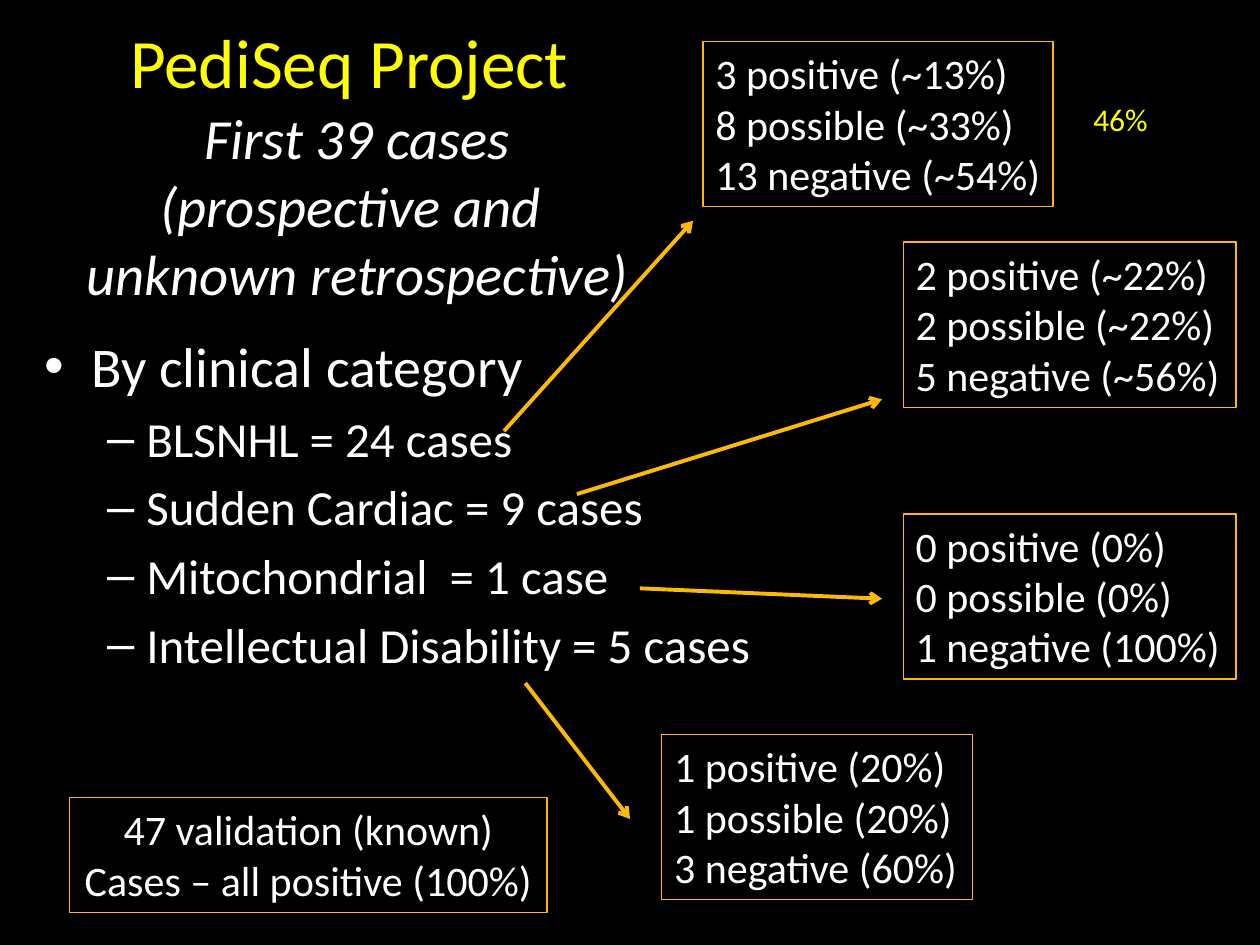
from pptx import Presentation, util as u
from pptx.dml.color import RGBColor
from pptx.enum import shapes, text
from pptx.oxml.ns import qn
from lxml import etree

HUE = {"back": "000000", "text": "FFFFFF", "head": "FFFF00", "edge": "FEB80A"}
FONT = "Calibri"
TITLE = [("PediSeq Project ", 39.6, "head", False),
         ("First 39 cases", 32.4, "text", True),
         ("(prospective and ", 32.4, "text", True),
         ("unknown retrospective)", 32.4, "text", True)]
TOPIC = "By clinical category"
CASES = ["BLSNHL = 24 cases", "Sudden Cardiac = 9 cases",
         "Mitochondrial  = 1 case", "Intellectual Disability = 5 cases"]
TALLY = [
    ((14.17, 0.84, 7.06, 3.33), (10.16, 8.69, 13.97, 4.45),
     ["3 positive (~13%)", "8 possible (~33%)", "13 negative (~54%)"]),
    ((18.21, 4.88, 6.71, 3.33), (11.63, 9.96, 17.78, 8.05),
     ["2 positive (~22%)", "2 possible (~22%)", "5 negative (~56%)"]),
    ((18.21, 10.36, 6.71, 3.33), (12.9, 11.86, 17.78, 12.07),
     ["0 positive (0%)", "0 possible (0%)", "1 negative (100%)"]),
    ((13.34, 14.81, 6.27, 3.33), (10.59, 13.77, 12.7, 16.51),
     ["1 positive (20%)", "1 possible (20%)", "3 negative (60%)"]),
]
KNOWN = ["47 validation (known)", "Cases – all positive (100%)"]


def cm(spot):
    return [u.Cm(n) for n in spot]


def rgb(name):
    return RGBColor.from_string(HUE[name])


def write(para, words, size, hue="text", slant=False):
    run = para.add_run()
    run.text = words
    font = run.font
    font.name, font.size, font.italic = FONT, u.Pt(size), slant
    font.color.rgb = rgb(hue)


def lines(frame, rows):
    for i, row in enumerate(rows):
        para = frame.add_paragraph() if i else frame.paragraphs[0]
        yield para, row


def label(home, spot):
    frame = home.add_textbox(*cm(spot)).text_frame
    frame.word_wrap = True
    return frame


def box(home, spot, rows, align=text.PP_ALIGN.LEFT):
    rect = home.add_shape(shapes.MSO_SHAPE.RECTANGLE, *cm(spot))
    rect.shadow.inherit = False
    rect.fill.background()
    rect.line.color.rgb = rgb("edge")
    rect.line.width = u.Pt(0.75)
    frame = rect.text_frame
    frame.word_wrap = False
    frame.auto_size = text.MSO_AUTO_SIZE.SHAPE_TO_FIT_TEXT
    frame.vertical_anchor = text.MSO_ANCHOR.TOP
    for para, row in lines(frame, rows):
        para.alignment = align
        write(para, row, 24)


def arrow(home, ends):
    link = home.add_connector(shapes.MSO_CONNECTOR.STRAIGHT, *cm(ends))
    link.line.color.rgb = rgb("edge")
    link.line.width = u.Pt(2.25)
    etree.SubElement(link.line._get_or_add_ln(), qn("a:tailEnd"), type="arrow")
    etree.SubElement(link._element.spPr, qn("a:effectLst"))


def bullet(para, mark, left, hang):
    props = para._p.get_or_add_pPr()
    props.set("marL", str(u.Cm(left)))
    props.set("indent", str(-u.Cm(hang)))
    etree.SubElement(props, qn("a:buFont"), typeface="Arial")
    etree.SubElement(props, qn("a:buChar"), char=mark)


def main():
    deck = Presentation()
    deck.slide_width, deck.slide_height = cm((25.4, 19.05))
    slide = deck.slides.add_slide(deck.slide_layouts[6])
    slide.background.fill.solid()
    slide.background.fill.fore_color.rgb = rgb("back")
    home = slide.shapes

    frame = label(home, (0.43, 1.7, 13.54, 3.18))
    frame.vertical_anchor = text.MSO_ANCHOR.MIDDLE
    head = frame.paragraphs[0]
    head.alignment = text.PP_ALIGN.CENTER
    for i, part in enumerate(TITLE):
        if i:
            head.add_line_break()
        write(head, *part)

    frame = label(home, (0.64, 6.55, 15.88, 11.43))
    for para, row in lines(frame, [TOPIC] + CASES):
        if row == TOPIC:
            write(para, row, 32)
            bullet(para, "•", 0.95, 0.95)
        else:
            para.level = 1
            para.space_before = u.Pt(5.6)
            write(para, row, 28)
            bullet(para, "–", 2.06, 0.79)

    for spot, ends, rows in TALLY:
        group = home.add_group_shape().shapes
        box(group, spot, rows)
        arrow(group, ends)

    box(home, (1.4, 16.08, 9.63, 2.31), KNOWN, text.PP_ALIGN.CENTER)
    write(label(home, (21.79, 1.9, 2.34, 1.02)).paragraphs[0], "46%", 18, "head")
    deck.save("out.pptx")


if __name__ == "__main__":
    main()
